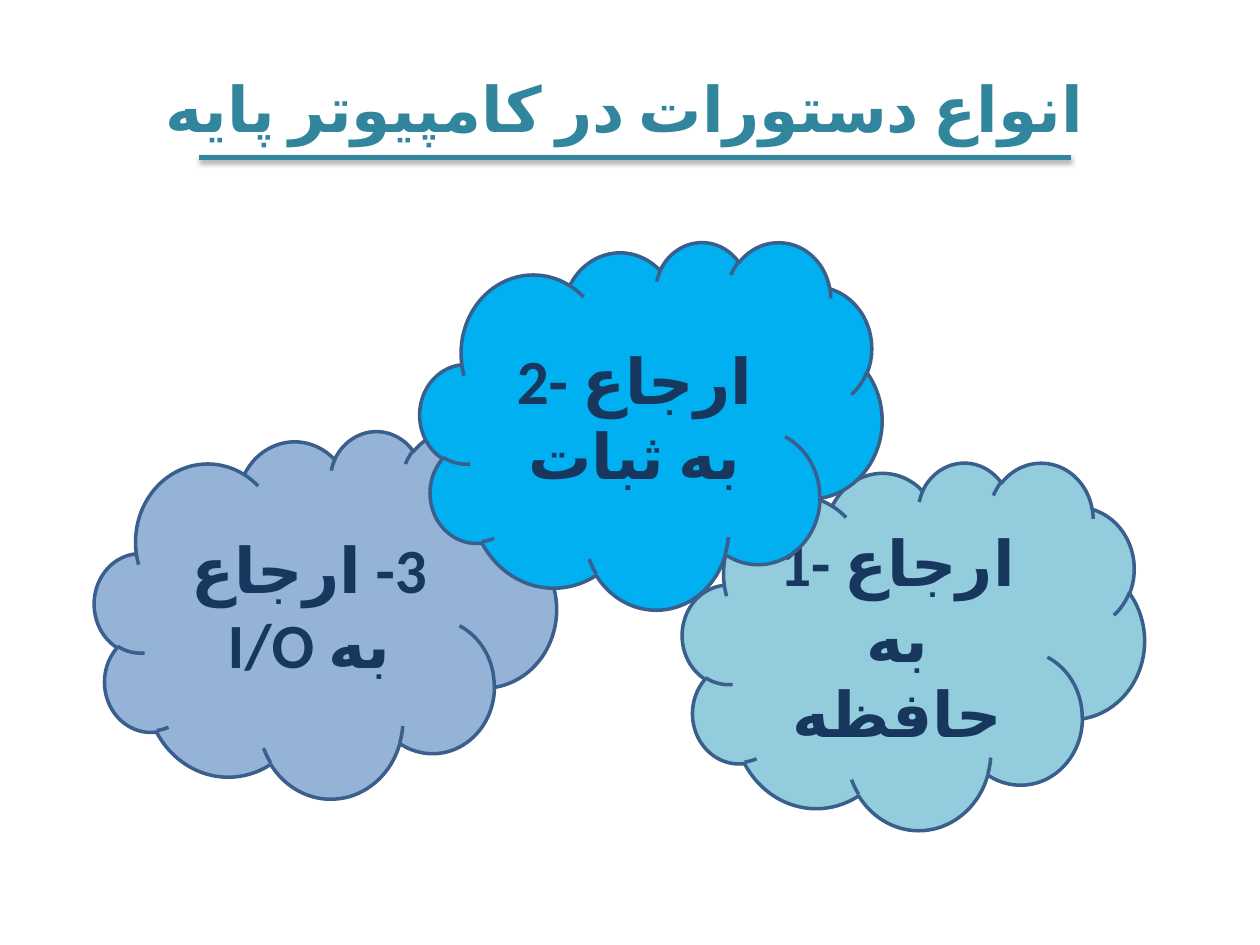
import pptx
import pptx.util
import pptx.dml.color
import pptx.enum.shapes
import pptx.enum.text
import pptx.oxml

Pt = pptx.util.Pt
COLORS = {
    "teal": "31859C",
    "outline": "262626",
    "navy": "17375E",
    "edge": "3A5F8C",
    "memory": "93CDDD",
    "io": "95B3D7",
    "register": "00B0F0",
}
NAMESPACE = 'xmlns:a="http://schemas.openxmlformats.org/drawingml/2006/main"'


def rgb(name):
    return pptx.dml.color.RGBColor.from_string(COLORS[name])


def write(frame, text, color, anchor, rtl=False):
    frame.word_wrap = True
    frame.vertical_anchor = anchor
    para = frame.paragraphs[0]
    para.alignment = pptx.enum.text.PP_ALIGN.CENTER
    if rtl:
        para._p.get_or_add_pPr().set("rtl", "1")
    span = para.add_run()
    span.text = text
    span.font.name = "Calibri"
    span.font.size = Pt(36)
    span.font.bold = True
    span.font.color.rgb = rgb(color)
    properties = span._r.get_or_add_rPr()
    properties.set("lang", "fa-IR")
    properties.append(pptx.oxml.parse_xml(f'<a:cs {NAMESPACE} typeface="Calibri"/>'))
    return span


deck = pptx.Presentation()
deck.slide_width = Pt(720)
deck.slide_height = Pt(540)
page = deck.slides.add_slide(deck.slide_layouts[6])

underline = page.shapes.add_connector(
    pptx.enum.shapes.MSO_CONNECTOR.STRAIGHT, Pt(114), Pt(90), Pt(612), Pt(90)
)
underline.line.color.rgb = rgb("teal")
underline.line.width = Pt(3)
underline._element.spPr.append(pptx.oxml.parse_xml(
    f'<a:effectLst {NAMESPACE}>'
    f'<a:outerShdw blurRad="{Pt(3.1)}" dist="{Pt(1.8)}" dir="5400000" rotWithShape="0">'
    '<a:srgbClr val="000000"><a:alpha val="35000"/></a:srgbClr>'
    '</a:outerShdw></a:effectLst>'
))

title = page.shapes.add_textbox(Pt(30), Pt(36), Pt(654), Pt(51))
title_span = write(
    title.text_frame, "انواع دستورات در کامپیوتر پایه", "teal",
    anchor=pptx.enum.text.MSO_ANCHOR.TOP,
)
title.text_frame.auto_size = pptx.enum.text.MSO_AUTO_SIZE.SHAPE_TO_FIT_TEXT
title_span._r.get_or_add_rPr().insert(0, pptx.oxml.parse_xml(
    f'<a:ln {NAMESPACE} w="{Pt(0.75)}"><a:solidFill>'
    f'<a:srgbClr val="{COLORS["outline"]}"/></a:solidFill></a:ln>'
))

clouds = [
    ("1- ارجاع به حافظه", "memory", 390, 264, False),
    ("3- ارجاع به I/O", "io", 54, 246, True),
    ("2- ارجاع به ثبات", "register", 240, 138, False),
]
for text, color, left, top, rtl in clouds:
    cloud = page.shapes.add_shape(
        pptx.enum.shapes.MSO_SHAPE.CLOUD, Pt(left), Pt(top), Pt(264), Pt(210)
    )
    cloud.shadow.inherit = False
    cloud.fill.solid()
    cloud.fill.fore_color.rgb = rgb(color)
    cloud.line.color.rgb = rgb("edge")
    cloud.line.width = Pt(2)
    write(cloud.text_frame, text, "navy",
          anchor=pptx.enum.text.MSO_ANCHOR.MIDDLE, rtl=rtl)

deck.save("out.pptx")
